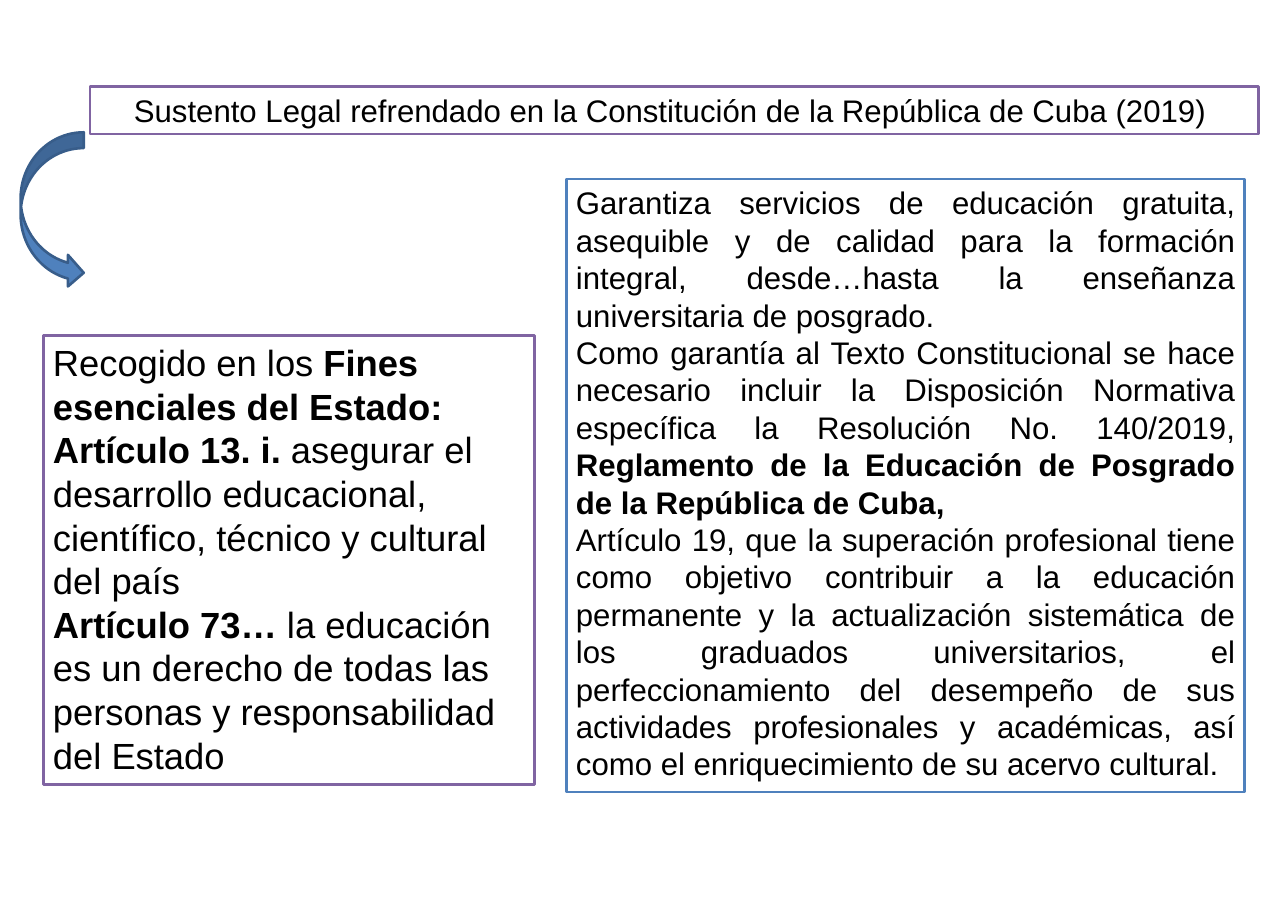
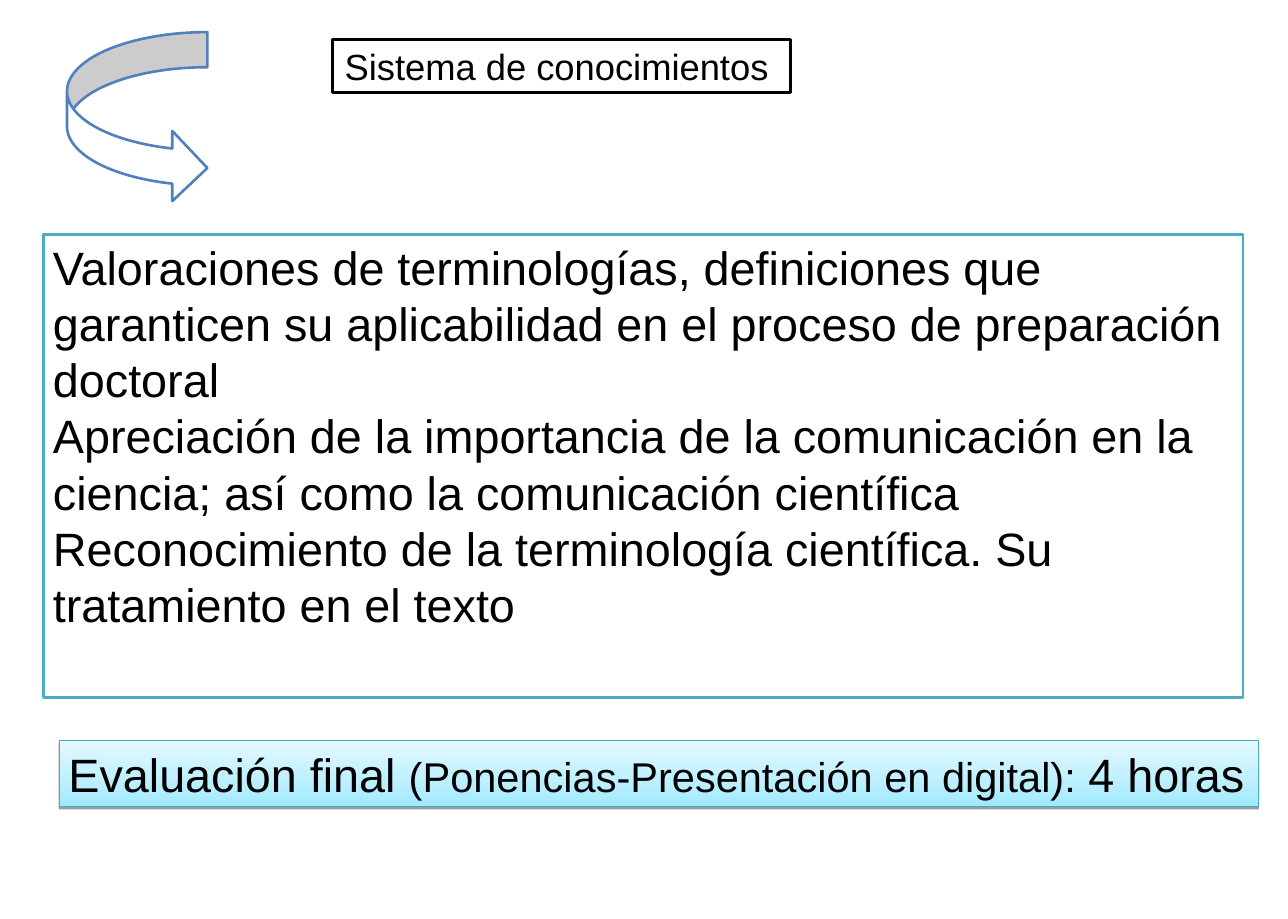
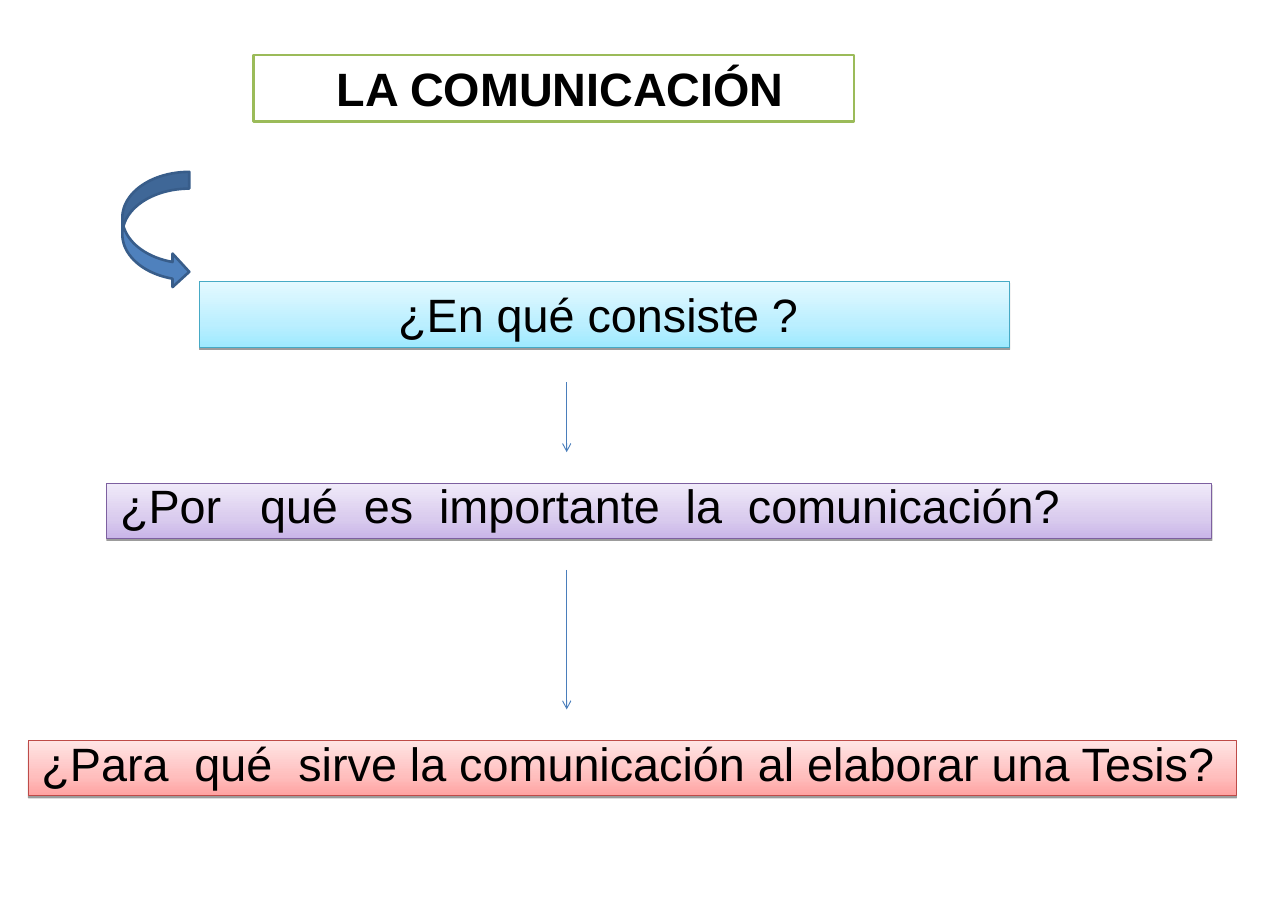
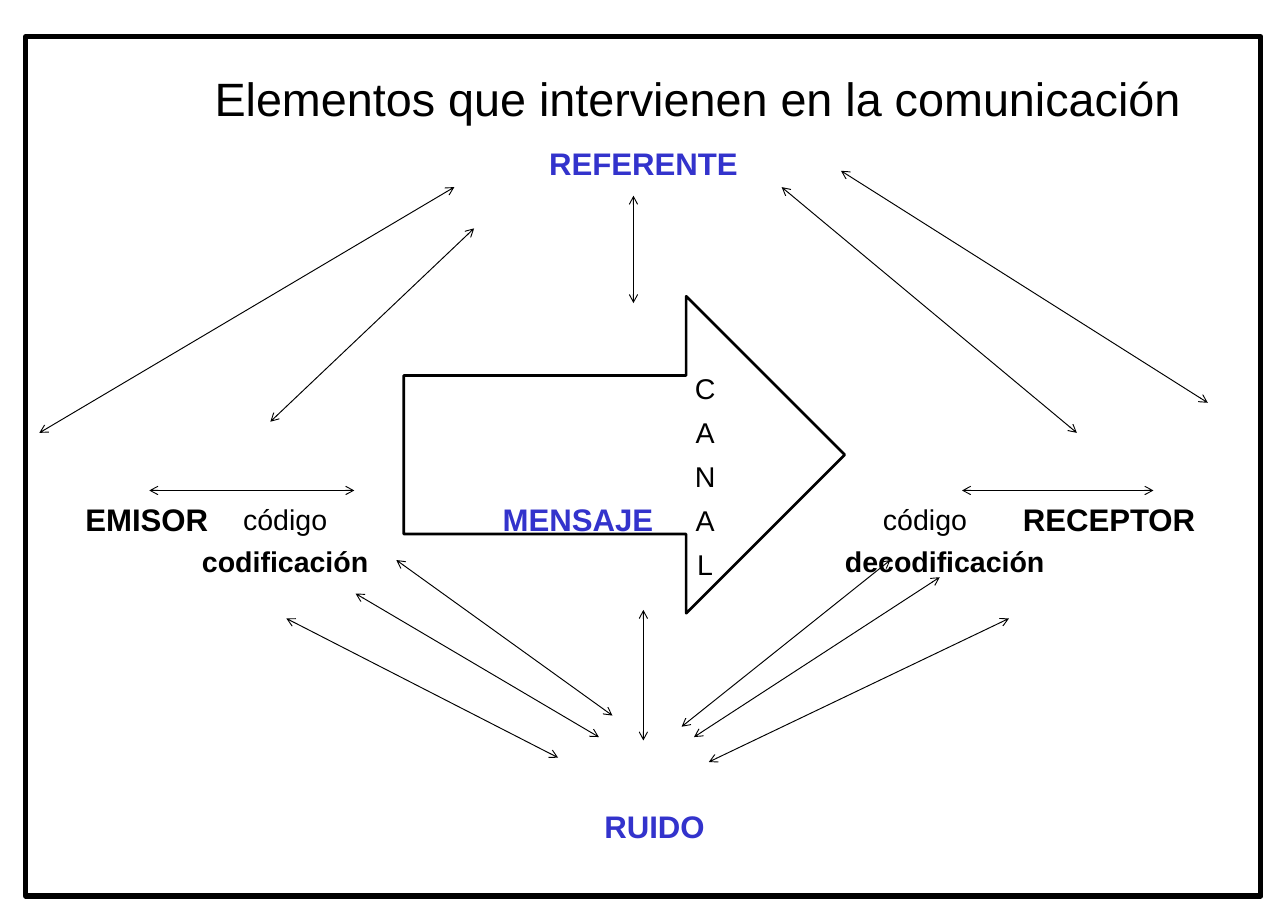
from copy import deepcopy

from lxml import etree
from pptx import Presentation
from pptx.dml.color import RGBColor
from pptx.enum.shapes import MSO_CONNECTOR, MSO_SHAPE
from pptx.enum.text import MSO_ANCHOR, PP_ALIGN
from pptx.oxml.ns import qn
from pptx.util import Inches, Pt

RECT, FRAME_ARROW, CURVED = (MSO_SHAPE.RECTANGLE, MSO_SHAPE.RIGHT_ARROW,
                             MSO_SHAPE.CURVED_RIGHT_ARROW)
STRAIGHT = MSO_CONNECTOR.STRAIGHT
LEFT, CENTER, JUSTIFY = PP_ALIGN.LEFT, PP_ALIGN.CENTER, PP_ALIGN.JUSTIFY
TOP, MIDDLE = MSO_ANCHOR.TOP, MSO_ANCHOR.MIDDLE

W, H = 13.78, 9.83
PAGE = (0, 0, W, H)
FONT = "Arial"
BLACK, WHITE, LABEL_BLUE = "000000", "FFFFFF", "3333CC"
BLUE, DARK_BLUE, ARROW_BLUE = "4F81BD", "385D8A", "4A7EBB"
PURPLE, AQUA, GREEN = "8064A2", "4BACC6", "9BBB59"

# Band styles: outline, then gradient colours from bottom to top
AQUA_BAND = ("46AAC5", ("9EEAFF", "BBEFFF", "E4F9FF"))
PURPLE_BAND = ("7D60A0", ("C9B5E8", "D9CBEE", "F0EAF9"))
RED_BAND = ("BE4B48", ("FFA2A1", "FFBEBD", "FFE5E5"))
BAND_STOPS = (0, 0.35, 1)


def rgb(hex_color):
    return RGBColor.from_string(hex_color)


def within(box, x, y, w, h):
    """Turn percentages of a box into a box in inches."""
    left, top, width, height = box
    return (left + width * x / 100, top + height * y / 100,
            width * w / 100, height * h / 100)


def add_outlined(slide, kind, box, line, width=2, fill=WHITE):
    s = slide.shapes.add_shape(kind, *map(Inches, box))
    s.shadow.inherit = False
    if fill:
        s.fill.solid()
        s.fill.fore_color.rgb = rgb(fill)
    else:
        s.fill.background()
    s.line.color.rgb = rgb(line)
    s.line.width = Pt(width)
    return s


def add_band(slide, box, style):
    """Add a box with a three-colour gradient and a thin shadow below."""
    line, colors = style
    s = add_outlined(slide, RECT, box, line, 0.75)
    s.fill.gradient()
    s.fill.gradient_angle = 90
    stops = s._element.spPr.find(".//" + qn("a:gsLst"))
    stops.append(deepcopy(stops[0]))
    for stop, color, position in zip(s.fill.gradient_stops, colors, BAND_STOPS):
        stop.color.rgb = rgb(color)
        stop.position = position
    effects = s._element.spPr.find(qn("a:effectLst"))
    shadow = etree.SubElement(effects, qn("a:outerShdw"), dist="20000",
                              dir="5400000", rotWithShape="0")
    color = etree.SubElement(shadow, qn("a:srgbClr"), val=BLACK)
    etree.SubElement(color, qn("a:alpha"), val="38000")
    return s


def write(s, paragraphs, size, align=LEFT, color=BLACK, bold=False,
          anchor=TOP, wrap=True):
    """Fill a shape; a paragraph is a string or a list of (text, bold, size)."""
    tf = s.text_frame
    tf.word_wrap = wrap
    tf.vertical_anchor = anchor
    for i, content in enumerate(paragraphs):
        p = tf.paragraphs[0] if i == 0 else tf.add_paragraph()
        p.alignment = align
        p.font.name, p.font.size, p.font.bold = FONT, Pt(size), bold
        p.font.color.rgb = rgb(color)
        runs = [(content, bold, size)] if isinstance(content, str) else content
        for text, run_bold, run_size in runs:
            r = p.add_run()
            r.text = text
            if run_bold != bold:
                r.font.bold = run_bold
            if run_size != size:
                r.font.size = Pt(run_size)
    return tf


def add_arrow(slide, box, x1, y1, x2, y2, color=BLACK, both_ends=True):
    """Join two points, given as percentages of the box."""
    start, end = within(box, x1, y1, 0, 0)[:2], within(box, x2, y2, 0, 0)[:2]
    c = slide.shapes.add_connector(STRAIGHT, *map(Inches, start + end))
    c.line.color.rgb = rgb(color)
    c.line.width = Pt(0.75)
    ln = c._element.spPr.find(qn("a:ln"))
    for tag in ("a:headEnd", "a:tailEnd") if both_ends else ("a:tailEnd",):
        etree.SubElement(ln, qn(tag), type="arrow")
    etree.SubElement(c._element.spPr, qn("a:effectLst"))


def add_label(slide, box, x, y, text, size, color=BLACK, bold=False):
    """Centre a line of text, or several stacked, on a point of the box."""
    s = slide.shapes.add_textbox(*map(Inches, within(box, x - 40, y - 4, 80, 8)))
    return write(s, text.split("\n"), size, CENTER, color, bold, MIDDLE, False)


def legal_basis(slide, box):
    s = add_outlined(slide, RECT, within(box, 3.4, 36.5, 38.1, 48.9), PURPLE)
    write(s, [
        [("Recogido en los ", False, 28),
         ("Fines esenciales del Estado: Artículo 13. i.", True, 28),
         (" asegurar el desarrollo educacional, científico, técnico y "
          "cultural del país", False, 28)],
        [("Artículo 73… ", True, 28),
         ("la educación es un derecho de todas las personas y "
          "responsabilidad del Estado", False, 28)],
    ], 28)
    s = add_outlined(slide, RECT, within(box, 44, 19.5, 52.6, 66.7), BLUE)
    write(s, [
        "Garantiza servicios de educación gratuita, asequible y de calidad "
        "para la formación integral, desde…hasta la enseñanza universitaria "
        "de posgrado.",
        [("Como garantía al Texto Constitucional se hace necesario incluir la "
          "Disposición Normativa específica la Resolución No. 140/2019, ",
          False, 24),
         ("Reglamento de la Educación de Posgrado de la República de Cuba,",
          True, 24)],
        "Artículo 19, que la superación profesional tiene como objetivo "
        "contribuir a la educación permanente y la actualización sistemática "
        "de los graduados universitarios, el perfeccionamiento del desempeño "
        "de sus actividades profesionales y académicas, así como el "
        "enriquecimiento de su acervo cultural.",
    ], 24, JUSTIFY)
    s = add_outlined(slide, RECT, within(box, 7, 9.4, 90.7, 5.2), PURPLE)
    write(s, ["Sustento Legal refrendado en la Constitución de la República "
              "de Cuba (2019) "], 24, CENTER)
    add_outlined(slide, CURVED, within(box, 1.6, 14.4, 4.9, 17), DARK_BLUE,
                 fill=BLUE)


def knowledge_system(slide, box):
    s = add_outlined(slide, RECT, within(box, 3.4, 25.5, 93.1, 50.4), AQUA)
    write(s, [
        "Valoraciones de terminologías, definiciones que garanticen su "
        "aplicabilidad en el proceso de preparación doctoral",
        "Apreciación de la importancia de la comunicación en la ciencia; así "
        "como la comunicación científica",
        "Reconocimiento de la terminología científica. Su tratamiento en el "
        "texto",
    ], 36)
    s = add_band(slide, within(box, 4.6, 80.6, 93.1, 7.2), AQUA_BAND)
    write(s, [[("Evaluación final ", False, 36),
               ("(Ponencias-Presentación en digital): ", False, 32),
               ("4 horas", False, 36)]], 36, JUSTIFY)
    s = add_outlined(slide, RECT, within(box, 25.8, 4.3, 35.6, 5.8), BLACK)
    write(s, ["Sistema de conocimientos "], 28, CENTER, wrap=False)
    add_outlined(slide, CURVED, within(box, 5.2, 3.5, 10.9, 18.6), BLUE)


def communication_questions(slide, box):
    s = add_outlined(slide, RECT, within(box, 19.7, 6, 46.6, 7.2), GREEN)
    write(s, [" LA COMUNICACIÓN"], 36, CENTER, bold=True)
    s = add_band(slide, within(box, 15.5, 30.6, 62.9, 7.2), AQUA_BAND)
    write(s, ["¿En qué consiste ? "], 36, CENTER)
    for x, y, w, style, question in (
            (8.3, 52.6, 85.8, PURPLE_BAND,
             "¿Por   qué  es  importante  la  comunicación?"),
            (2.2, 80.6, 93.8, RED_BAND,
             "¿Para  qué  sirve la comunicación al elaborar una Tesis?")):
        s = add_band(slide, within(box, x, y, w, 6), style)
        tf = write(s, [question], 36, JUSTIFY)
        tf.margin_left = Inches(0.14)
        tf.paragraphs[0].line_spacing = 0.8
    for y1, y2 in ((41.6, 49.2), (62, 77.2)):
        add_arrow(slide, box, 44, y1, 44, y2, ARROW_BLUE, both_ends=False)
    add_outlined(slide, CURVED, within(box, 9.5, 18.7, 5.2, 12.7), DARK_BLUE,
                 fill=BLUE)


def communication_diagram(slide, box):
    add_outlined(slide, RECT, box, BLACK, 4, fill=None)
    add_outlined(slide, FRAME_ARROW, within(box, 30.6, 30.2, 35.7, 36.9), BLACK,
                 fill=None)
    add_label(slide, box, 54.4, 7.1,
              "Elementos que intervienen en la comunicación", 36)
    for x, y, text, color in ((50, 14.7, "REFERENTE", LABEL_BLUE),
                              (9.8, 56.1, "EMISOR", BLACK),
                              (44.7, 56.1, "MENSAJE", LABEL_BLUE),
                              (87.7, 56.1, "RECEPTOR", BLACK),
                              (50.9, 91.9, "RUIDO", LABEL_BLUE)):
        add_label(slide, box, x, y, text, 24, color, True)
    for x, process in ((21, "codificación"), (74.4, "decodificación")):
        add_label(slide, box, x, 61, process, 22, bold=True)
    for x in (21, 72.8):
        add_label(slide, box, x, 56.1, "código", 22)
    channel = add_label(slide, box, 55, 51.1, "\n".join("CANAL"), 22)
    for p in channel.paragraphs[1:]:
        p.space_before = Pt(7.4)
    for ends in ((49.2, 18.5, 49.2, 31), (50, 66.7, 50, 81.9),
                 (10, 52.8, 26.6, 52.8), (75.8, 52.8, 91.3, 52.8),
                 (1.1, 46.1, 34.7, 17.5), (19.8, 44.8, 36.3, 22.3),
                 (66, 15.6, 95.7, 42.6), (61.2, 17.5, 85.1, 46.1),
                 (21.1, 67.7, 43.1, 83.9), (26.7, 64.8, 46.4, 81.5),
                 (54.1, 81.5, 74, 62.9), (55.3, 84.4, 79.6, 67.7),
                 (53.1, 80.3, 70, 60.9), (30, 60.9, 47.5, 79)):
        add_arrow(slide, box, *ends)


def main():
    prs = Presentation()
    prs.slide_width, prs.slide_height = Inches(W), Inches(H)
    for build, box in ((legal_basis, PAGE),
                       (knowledge_system, PAGE),
                       (communication_questions, PAGE),
                       (communication_diagram, within(PAGE, 2, 4, 95.9, 93.5))):
        build(prs.slides.add_slide(prs.slide_layouts[6]), box)
    prs.save("out.pptx")


if __name__ == "__main__":
    main()
